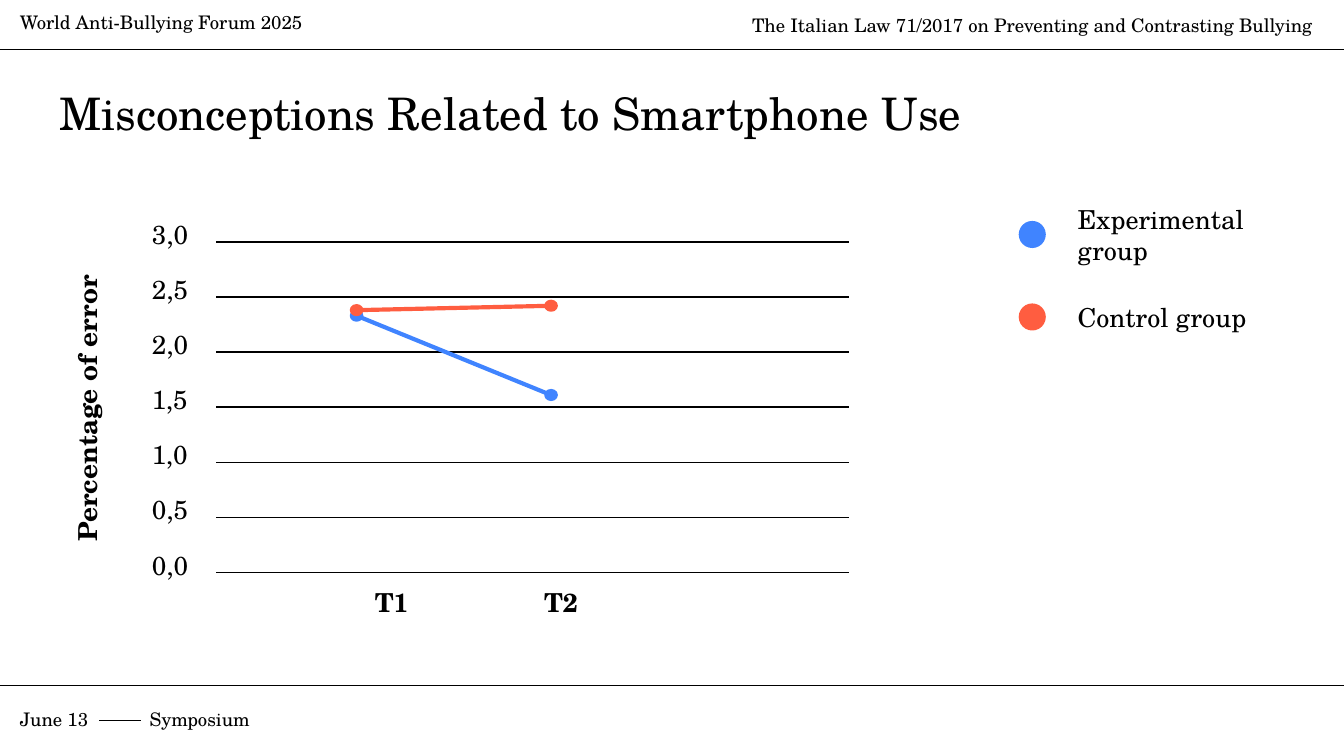
from dataclasses import dataclass

import pptx
import pptx.dml.color
import pptx.enum.shapes
import pptx.enum.text
import pptx.oxml
import pptx.oxml.ns
import pptx.util
from pptx.util import Pt

Align = pptx.enum.text.PP_ALIGN


@dataclass(frozen=True)
class Theme:
    font: str = "TeX Gyre Schola"
    ink: str = "000000"
    blue: str = "4084FF"
    red: str = "FF5D40"
    title_size: float = 24
    label_size: float = 14
    running_size: float = 10
    inset: float = 7.2
    rule: float = 0.75
    trend: float = 2.25
    dot_outline: float = 1.5


@dataclass(frozen=True)
class Box:
    left: float
    top: float
    width: float
    height: float

    def lengths(self) -> tuple:
        return Pt(self.left), Pt(self.top), Pt(self.width), Pt(self.height)


@dataclass(frozen=True)
class Group:
    name: str
    color: str
    errors: tuple[float, float]
    key_top: float
    name_box: Box


THEME = Theme()
SLIDE_WIDTH, SLIDE_HEIGHT = 720, 405

GRID_LEFT, GRID_RIGHT = 115.9, 455
ZERO_Y, UNIT_HEIGHT = 306.7, 59.04
TICKS = [step / 2 for step in range(7)]
TIME_X = (191, 295.2)
TIME_LABELS = {"T1": 193.7, "T2": 284.4}
TICK_LEFT, TICK_RISE = 74.2, 19.8
LABEL_WIDTH, LABEL_HEIGHT = 41.8, 24.5
DOT_WIDTH, DOT_HEIGHT = 5.8, 5
KEY_LEFT, KEY_SIZE = 546.5, 13

GROUPS = (
    Group("Experimental group", THEME.blue, (2.33, 1.61), 119.1,
          Box(570.2, 101.5, 113.8, 48.2)),
    Group("Control group", THEME.red, (2.38, 2.42), 163.3,
          Box(570.2, 154.1, 125.3, 31.7)),
)


def rgb(color: str) -> pptx.dml.color.RGBColor:
    return pptx.dml.color.RGBColor.from_string(color)


def error_y(error: float) -> float:
    """Height on the slide of a value on the error scale."""
    return ZERO_Y - error * UNIT_HEIGHT


def write(shape, text: str, size: float, bold: bool = False,
          align=Align.LEFT):
    """Fill a text shape with one styled paragraph and return it."""
    frame = shape.text_frame
    frame.word_wrap = True
    frame.auto_size = pptx.enum.text.MSO_AUTO_SIZE.NONE
    frame.vertical_anchor = pptx.enum.text.MSO_ANCHOR.TOP
    frame.margin_left = frame.margin_right = Pt(THEME.inset)
    frame.margin_top = frame.margin_bottom = Pt(THEME.inset)
    frame.text = text
    paragraph = frame.paragraphs[0]
    paragraph.alignment = align
    paragraph.font.name = THEME.font
    paragraph.font.size = Pt(size)
    paragraph.font.bold = bold
    paragraph.font.color.rgb = rgb(THEME.ink)
    return paragraph


def add_label(slide, text: str, box: Box, size: float = THEME.label_size,
              bold: bool = False, align=Align.LEFT, rotation: float = 0):
    label = slide.shapes.add_textbox(*box.lengths())
    label.rotation = rotation
    return write(label, text, size, bold, align)


def add_line(slide, start: tuple[float, float], end: tuple[float, float],
             color: str = THEME.ink, width: float = THEME.rule) -> None:
    line = slide.shapes.add_connector(
        pptx.enum.shapes.MSO_CONNECTOR.STRAIGHT,
        *(Pt(value) for value in start + end))
    line.line.color.rgb = rgb(color)
    line.line.width = Pt(width)
    properties = line._element.spPr
    properties.append(properties.makeelement(pptx.oxml.ns.qn("a:effectLst")))


def add_dot(slide, box: Box, color: str) -> None:
    dot = slide.shapes.add_shape(
        pptx.enum.shapes.MSO_SHAPE.OVAL, *box.lengths())
    dot.shadow.inherit = False
    dot.fill.solid()
    dot.fill.fore_color.rgb = rgb(color)
    dot.line.color.rgb = rgb(color)
    dot.line.width = Pt(THEME.dot_outline)


def add_tab_stop(paragraph, position: float) -> None:
    properties = paragraph._p.get_or_add_pPr()
    stops = pptx.oxml.parse_xml(
        f'<a:tabLst {pptx.oxml.ns.nsdecls("a")}>'
        f'<a:tab pos="{Pt(position)}" algn="l"/></a:tabLst>')
    properties.insert_element_before(stops, "a:defRPr", "a:extLst")


def add_running_text(slide) -> None:
    for rule_y in (26.6, 367.2):
        add_line(slide, (0, rule_y), (SLIDE_WIDTH, rule_y))
    size = THEME.running_size
    add_label(slide, "World Anti-Bullying Forum 2025",
              Box(3.6, 0, 218.2, 11.5), size)
    topic = add_label(
        slide, "The Italian Law 71/2017 on Preventing and Contrasting Bullying",
        Box(370.1, 0, 339.8, 11.5), size, align=Align.RIGHT)
    topic.line_spacing = 1.15
    session = add_label(slide, "June 13\tSymposium",
                        Box(3.6, 372.2, 156.2, 21.6), size)
    add_tab_stop(session, 69.5)
    add_line(slide, (53.3, 385.9), (75.6, 385.9))


def add_axes(slide) -> None:
    for tick in TICKS:
        y = error_y(tick)
        add_line(slide, (GRID_LEFT, y), (GRID_RIGHT, y))
        add_label(slide, f"{tick:.1f}".replace(".", ","),
                  Box(TICK_LEFT, y - TICK_RISE, LABEL_WIDTH, LABEL_HEIGHT))
    for time, left in TIME_LABELS.items():
        add_label(slide, time, Box(left, ZERO_Y, LABEL_WIDTH, LABEL_HEIGHT),
                  bold=True)
    add_label(slide, "Percentage of error", Box(-41, 193.7, 175.7, 31.7),
              bold=True, rotation=270)


def add_group(slide, group: Group) -> None:
    """Draw a group's trend with its end dots, and its legend entry."""
    points = [(x, error_y(error)) for x, error in zip(TIME_X, group.errors)]
    add_line(slide, *points, color=group.color, width=THEME.trend)
    for x, y in points:
        add_dot(slide, Box(x - DOT_WIDTH / 2, y - DOT_HEIGHT / 2,
                           DOT_WIDTH, DOT_HEIGHT), group.color)
    add_dot(slide, Box(KEY_LEFT, group.key_top, KEY_SIZE, KEY_SIZE),
            group.color)
    add_label(slide, group.name, group.name_box)


def main() -> None:
    deck = pptx.Presentation()
    deck.slide_width, deck.slide_height = Pt(SLIDE_WIDTH), Pt(SLIDE_HEIGHT)
    slide = deck.slides.add_slide(deck.slide_layouts.get_by_name("Title Only"))
    add_running_text(slide)
    title = slide.shapes.title
    title.left, title.top, title.width, title.height = Box(
        24.5, 38.9, 671, 46.8).lengths()
    write(title, "Misconceptions Related to Smartphone Use", THEME.title_size)
    add_axes(slide)
    for group in GROUPS:
        add_group(slide, group)
    deck.save("out.pptx")


if __name__ == "__main__":
    main()
